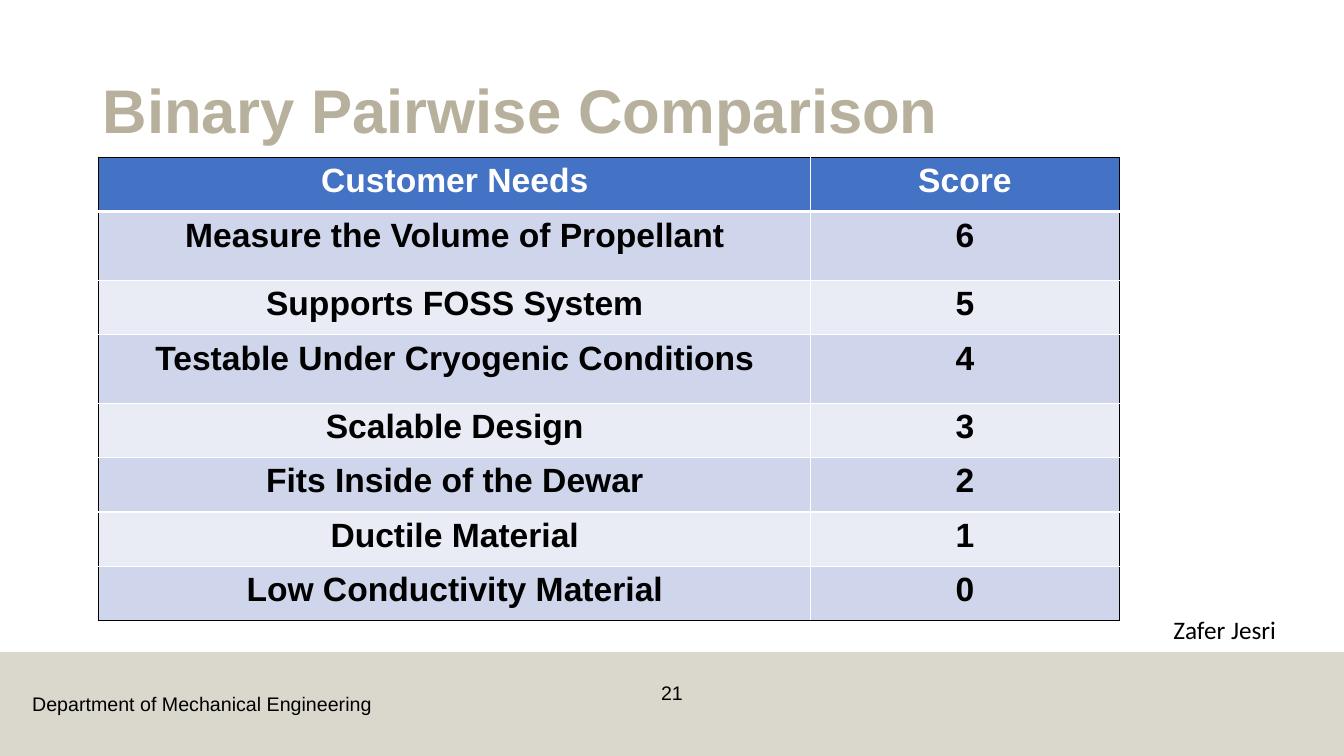
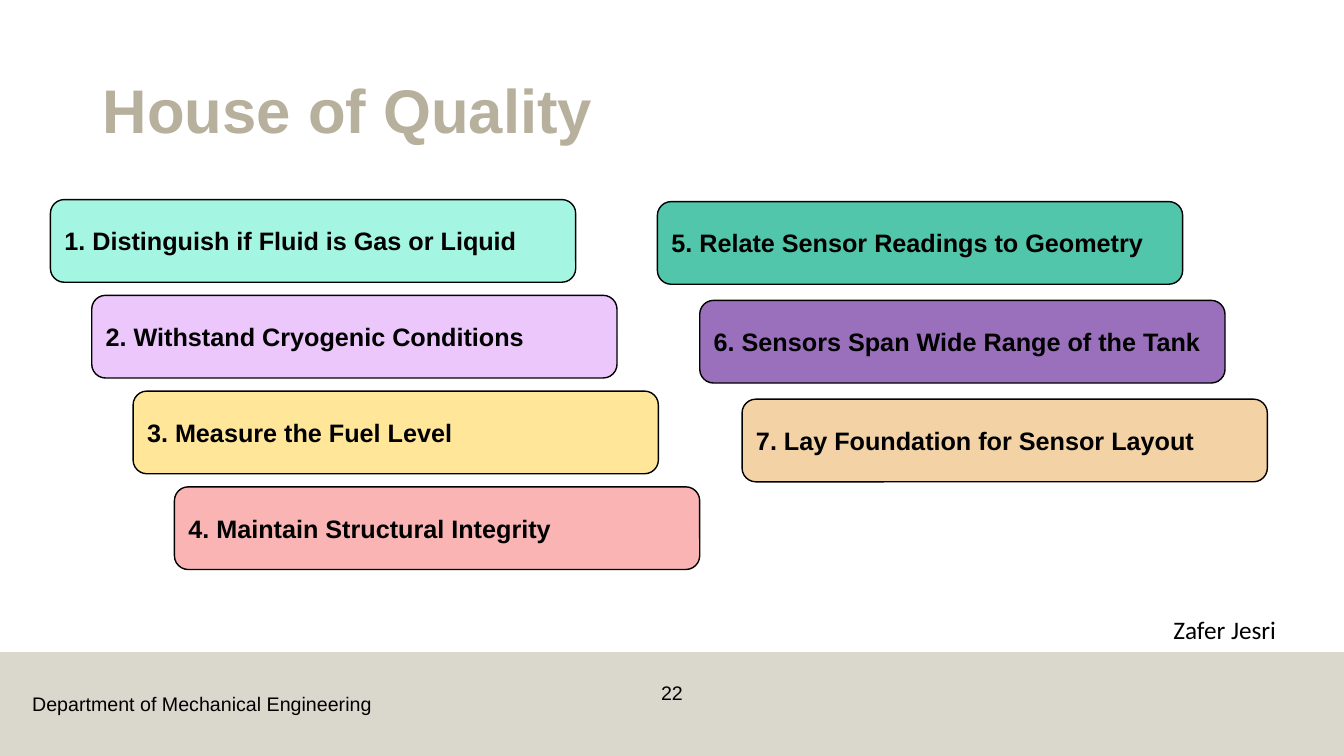
"""Build two slides: a pairwise comparison table and a list of quality targets."""
from dataclasses import dataclass

from lxml import etree
from pptx import Presentation
from pptx.dml import color as dml
from pptx.enum import shapes, text
from pptx.oxml import ns
from pptx.util import Inches, Pt


@dataclass(frozen=True)
class Theme:
    sand: str = "B7B09C"
    black: str = "000000"
    white: str = "FFFFFF"
    blue: str = "4472C4"
    bands: tuple = ("E9EBF5", "CFD5EA")
    sans: str = "Arial"
    sign: str = "Calibri"
    head: int = 44
    cell: int = 24
    body: int = 18
    foot: int = 14


theme = Theme()
rgb = dml.RGBColor.from_string


def write(frame, words, size, color=theme.black, bold=False, align=text.PP_ALIGN.LEFT, face=theme.sans):
    para = frame.paragraphs[0]
    para.alignment = align
    run = para.add_run()
    run.text = words
    run.font.name = face
    run.font.size = Pt(size)
    run.font.bold = bold
    run.font.color.rgb = rgb(color)
    return para


def label(slide, box, words, size, wrap=True, **style):
    frame = slide.shapes.add_textbox(*map(Inches, box)).text_frame
    frame.word_wrap = wrap
    write(frame, words, size, **style)


deck = Presentation()
deck.slide_width, deck.slide_height = Inches(13.33), Inches(7.5)
layout = deck.slide_layouts[5]
title = layout.placeholders[0]
title.left, title.top, title.width, title.height = map(Inches, (0.92, 0.4, 11.5, 1.45))

slides = []
for page, name in enumerate(("Binary Pairwise Comparison", "House of Quality"), 21):
    slide = deck.slides.add_slide(layout)
    slides.append(slide)
    frame = slide.shapes.title.text_frame
    frame.vertical_anchor = text.MSO_ANCHOR.MIDDLE
    write(frame, name, theme.head, theme.sand, True).line_spacing = 0.9
    label(slide, (6.28, 6.71, 0.77, 0.4), str(page), theme.foot, align=text.PP_ALIGN.CENTER)
    label(slide, (11.54, 6.05, 1.8, 0.4), "Zafer Jesri", theme.body, face=theme.sign)

needs, house = slides

band = needs.shapes.add_shape(shapes.MSO_SHAPE.RECTANGLE, 0, Inches(6.47), deck.slide_width, Inches(1.03))
band.shadow.inherit = False
band.fill.solid()
band.fill.fore_color.rgb = rgb(theme.sand)
tint = band.element.spPr.find(".//" + ns.qn("a:srgbClr"))
etree.SubElement(tint, ns.qn("a:alpha"), val="50000")
band.line.fill.background()
label(needs, (0.22, 6.82, 3.59, 0.34), "Department of Mechanical Engineering", theme.foot, wrap=False)
for part in (band, needs.shapes[-1]):
    layout.shapes.element.append(part.element)

rows = (
    ("Customer Needs", "Score", 0.54),
    ("Measure the Volume of Propellant", "6", 0.68),
    ("Supports FOSS System", "5", 0.54),
    ("Testable Under Cryogenic Conditions", "4", 0.68),
    ("Scalable Design", "3", 0.54),
    ("Fits Inside of the Dewar", "2", 0.54),
    ("Ductile Material", "1", 0.54),
    ("Low Conductivity Material", "0", 0.54),
)
last = len(rows) - 1
table = needs.shapes.add_table(len(rows), 2, *map(Inches, (0.98, 1.56, 10.12, 4.62))).table
for col, width in zip(table.columns, (7.06, 3.06)):
    col.width = Inches(width)
for i, (*words, height) in enumerate(rows):
    table.rows[i].height = Inches(height)
    for j, word in enumerate(words):
        cell = table.cell(i, j)
        props = cell._tc.get_or_add_tcPr()
        outer = {"L": j == 0, "R": j == 1, "T": i == 0, "B": i == last}
        for side, edge in outer.items():
            thick = (side, i) in (("B", 0), ("T", 1))
            line = etree.SubElement(props, ns.qn("a:ln" + side), w=str(Pt(3 if thick else 1)))
            fill = etree.SubElement(line, ns.qn("a:solidFill"))
            etree.SubElement(fill, ns.qn("a:srgbClr"), val=theme.black if edge else theme.white)
        cell.fill.solid()
        cell.fill.fore_color.rgb = rgb(theme.bands[i % 2] if i else theme.blue)
        color = theme.black if i else theme.white
        write(cell.text_frame, word, theme.cell, color, True, text.PP_ALIGN.CENTER)

stairs = (
    (0.5, 1.98, 0.41, 0.95, (
        ("1. Distinguish if Fluid is Gas or Liquid", "A4F5E1"),
        ("2. Withstand Cryogenic Conditions", "ECC7FC"),
        ("3. Measure the Fuel Level", "FFE699"),
        ("4. Maintain Structural Integrity", "FAB4B4"),
    )),
    (6.52, 2, 0.42, 0.98, (
        ("5. Relate Sensor Readings to Geometry", "52C6AA"),
        ("6. Sensors Span Wide Range of the Tank", "9A70BC"),
        ("7. Lay Foundation for Sensor Layout", "F3D3A5"),
    )),
)
for left, top, right, down, goals in stairs:
    for k, (goal, color) in enumerate(goals):
        box = map(Inches, (left + k * right, top + k * down, 5.21, 0.82))
        step = house.shapes.add_shape(shapes.MSO_SHAPE.ROUNDED_RECTANGLE, *box)
        step.shadow.inherit = False
        step.fill.solid()
        step.fill.fore_color.rgb = rgb(color)
        step.line.color.rgb = rgb(theme.black)
        step.line.width = Pt(1)
        step.text_frame.vertical_anchor = text.MSO_ANCHOR.MIDDLE
        write(step.text_frame, goal, theme.body, bold=True)

deck.save("out.pptx")
